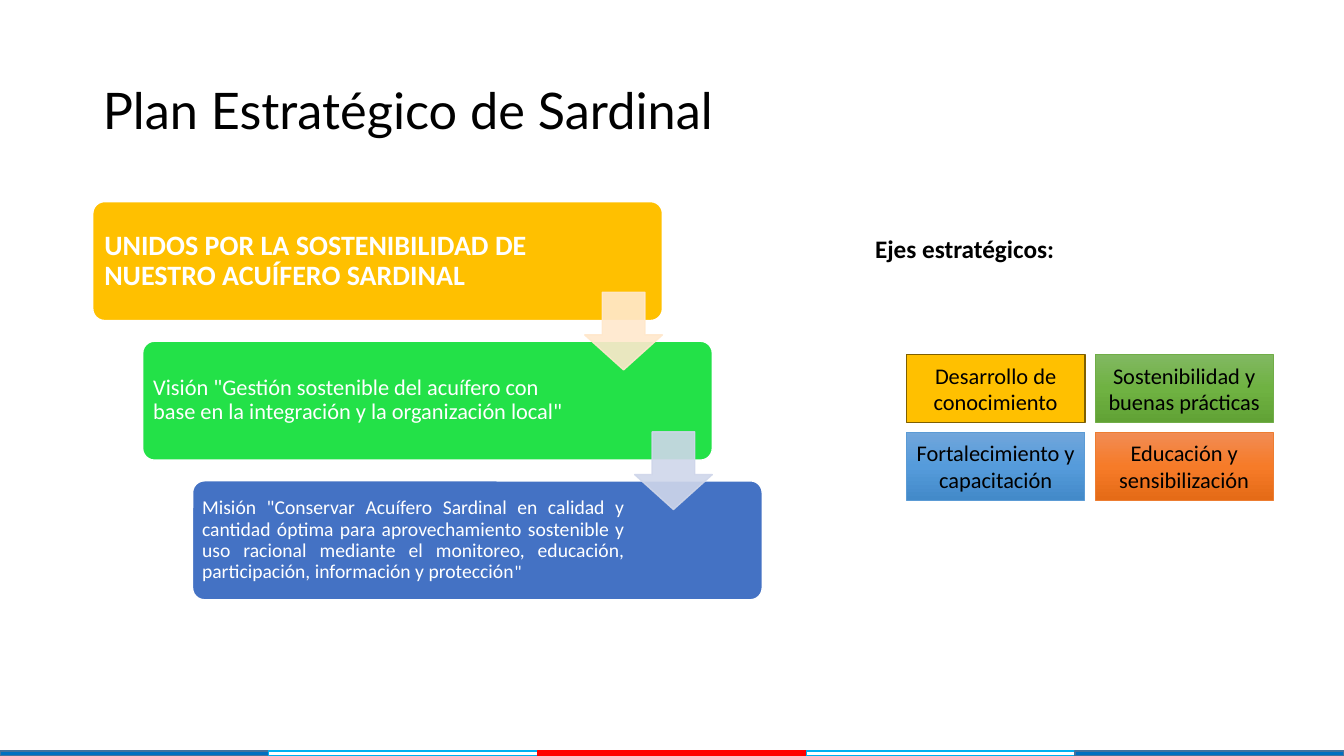
from lxml.etree import SubElement
from pptx import Presentation
from pptx.dml.color import RGBColor
from pptx.enum.shapes import MSO_SHAPE
from pptx.enum.text import MSO_ANCHOR, MSO_AUTO_SIZE, PP_ALIGN
from pptx.oxml.ns import qn
from pptx.util import Inches, Pt

COLORS = {
    "black": "000000", "white": "FFFFFF", "red": "FF0000",
    "navy": "0070C0", "navy_edge": "43739E", "cyan": "00B0F0",
    "amber": "FFC000", "amber_edge": "7F5F00", "lime": "23E148", "blue": "4472C4",
    "peach": "FFE8CC", "lavender": "CFD6EA",
    "green_top": "81B861", "green_mid": "6FB242", "green_low": "61A235", "green_edge": "70AD47",
    "sky_top": "71A6DB", "sky_mid": "559BDB", "sky_low": "438AC9", "sky_edge": "5B9BD5",
    "orange_top": "F18C55", "orange_mid": "F67B28", "orange_low": "E56B17", "orange_edge": "ED7D31",
}


def rgb(name):
    return RGBColor.from_string(COLORS[name])


def add_filled_shape(slide, kind, box, fill, line, line_width=1):
    shape = slide.shapes.add_shape(kind, *[Inches(length) for length in box])
    shape.shadow.inherit = False
    shape.fill.solid()
    shape.fill.fore_color.rgb = rgb(fill)
    shape.line.color.rgb = rgb(line)
    shape.line.width = Pt(line_width)
    return shape


def format_paragraph(paragraph, size, color, font="Calibri", bold=False,
                     alignment=PP_ALIGN.LEFT, line_spacing=None):
    paragraph.alignment = alignment
    if line_spacing:
        paragraph.line_spacing = line_spacing
    for run in paragraph.runs:
        run.font.name = font
        run.font.size = Pt(size)
        run.font.bold = bold
        run.font.color.rgb = rgb(color)


def apply_gradient(shape, names):
    shape.fill.gradient()
    shape.fill.gradient_angle = 270
    stops = next(shape._element.iter(qn("a:gsLst")))
    stops.clear()
    for position, name in zip((0, 50000, 100000), names):
        stop = SubElement(stops, qn("a:gs"), pos=str(position))
        SubElement(stop, qn("a:srgbClr"), val=COLORS[name])


def add_footer_stripe(slide, box):
    left, top, width, height = box
    segments = [("navy", "navy_edge"), ("white", "cyan"), ("red", "red"),
                ("white", "cyan"), ("navy", "navy_edge")]
    segment_width = width / len(segments)
    for index, (fill, line) in enumerate(segments):
        segment_box = (left + index * segment_width, top, segment_width, height)
        add_filled_shape(slide, MSO_SHAPE.RECTANGLE, segment_box, fill, line)


def add_title(slide, box):
    title = slide.shapes.title
    title.left, title.top, title.width, title.height = [Inches(length) for length in box]
    text_frame = title.text_frame
    text_frame.text = "Plan Estratégico de Sardinal"
    text_frame.auto_size = MSO_AUTO_SIZE.NONE
    text_frame.vertical_anchor = MSO_ANCHOR.MIDDLE
    format_paragraph(text_frame.paragraphs[0], 36, "black", "Lato", line_spacing=0.9)


def add_step(slide, box, text, fill, size, bold, alignment, margin, right_margin):
    step = add_filled_shape(slide, MSO_SHAPE.ROUNDED_RECTANGLE, box, fill, "white")
    step.adjustments[0] = 0.1
    text_frame = step.text_frame
    text_frame.word_wrap = True
    text_frame.vertical_anchor = MSO_ANCHOR.MIDDLE
    text_frame.margin_left = text_frame.margin_top = text_frame.margin_bottom = Inches(margin)
    text_frame.margin_right = Inches(right_margin)
    text_frame.text = text
    format_paragraph(text_frame.paragraphs[0], size, "white", bold=bold,
                     alignment=alignment, line_spacing=0.9)
    return text_frame.paragraphs[0]


def add_step_arrow(slide, box, color):
    arrow = add_filled_shape(slide, MSO_SHAPE.DOWN_ARROW, box, color, color)
    arrow.adjustments[0] = 0.55
    arrow.adjustments[1] = 0.45
    for color_element in arrow._element.spPr.iter(qn("a:srgbClr")):
        SubElement(color_element, qn("a:alpha"), val="90000")


def add_staircase(slide, box):
    left, top, width, height = box
    step_width, step_height, arrow_size = 5.65, 1.18, 0.77
    shift = (width - step_width) / 2
    pitch = (height - step_height) / 2
    steps = [
        ("UNIDOS POR LA SOSTENIBILIDAD DE NUESTRO ACUÍFERO SARDINAL",
         "amber", 20, True, PP_ALIGN.LEFT, 0.08, 1.3),
        ('Visión "Gestión sostenible del acuífero con base en la integración y la '
         'organización local"', "lime", 16, False, PP_ALIGN.LEFT, 0.07, 1.34),
        ('Misión "Conservar Acuífero Sardinal en calidad y cantidad óptima para '
         'aprovechamiento sostenible y uso racional mediante el monitoreo, educación, '
         'participación, información y protección',
         "blue", 14, False, PP_ALIGN.JUSTIFY, 0.06, 1.33),
    ]
    for index, step in enumerate(steps):
        step_box = (left + index * shift, top + index * pitch, step_width, step_height)
        paragraph = add_step(slide, step_box, *step)
    closing_quote = paragraph.add_run()
    closing_quote.text = '"'
    closing_quote.font.name = "Calibri"
    closing_quote.font.size = Pt(13)
    closing_quote.font.color.rgb = rgb("white")
    for index, color in enumerate(("peach", "lavender")):
        arrow_left = left + index * shift + step_width - arrow_size
        add_step_arrow(slide, (arrow_left, top + index * pitch + 0.9, arrow_size, arrow_size), color)


def add_axes(slide, box):
    left, top, width, height = box
    heading = slide.shapes.add_textbox(Inches(left), Inches(top), Inches(3.45), Inches(0.71))
    heading.text_frame.word_wrap = True
    heading.text_frame.text = "Ejes estratégicos:"
    format_paragraph(heading.text_frame.paragraphs[0], 18, "black", bold=True)

    card_width, card_height, gap = 1.77, 0.67, 0.1
    grid_left = left + width - 2 * card_width - gap
    grid_top = top + height - 2 * card_height - gap
    cards = [
        ("Desarrollo de conocimiento", "amber", 1),
        ("Sostenibilidad y buenas prácticas", "green", 0.5),
        ("Fortalecimiento y capacitación", "sky", 0.5),
        ("Educación y sensibilización", "orange", 0.5),
    ]
    for index, (text, color, line_width) in enumerate(cards):
        row, column = divmod(index, 2)
        card_box = (grid_left + column * (card_width + gap),
                    grid_top + row * (card_height + gap), card_width, card_height)
        card = add_filled_shape(slide, MSO_SHAPE.RECTANGLE, card_box, "amber",
                                f"{color}_edge", line_width)
        if color != "amber":
            apply_gradient(card, [f"{color}_{level}" for level in ("top", "mid", "low")])
        card.text_frame.word_wrap = True
        card.text_frame.vertical_anchor = MSO_ANCHOR.MIDDLE
        card.text_frame.text = text
        format_paragraph(card.text_frame.paragraphs[0], 16, "black", alignment=PP_ALIGN.CENTER)


def main():
    presentation = Presentation()
    presentation.slide_width = Inches(13.33)
    presentation.slide_height = Inches(7.5)
    slide = presentation.slides.add_slide(presentation.slide_layouts[5])
    add_footer_stripe(slide, (0, 7.45, 13.33, 0.05))
    add_title(slide, (0.92, 0.4, 11.5, 1.45))
    add_staircase(slide, (0.92, 2, 6.64, 3.95))
    add_axes(slide, (8.58, 2.27, 4.05, 2.69))
    presentation.save("out.pptx")


if __name__ == "__main__":
    main()
